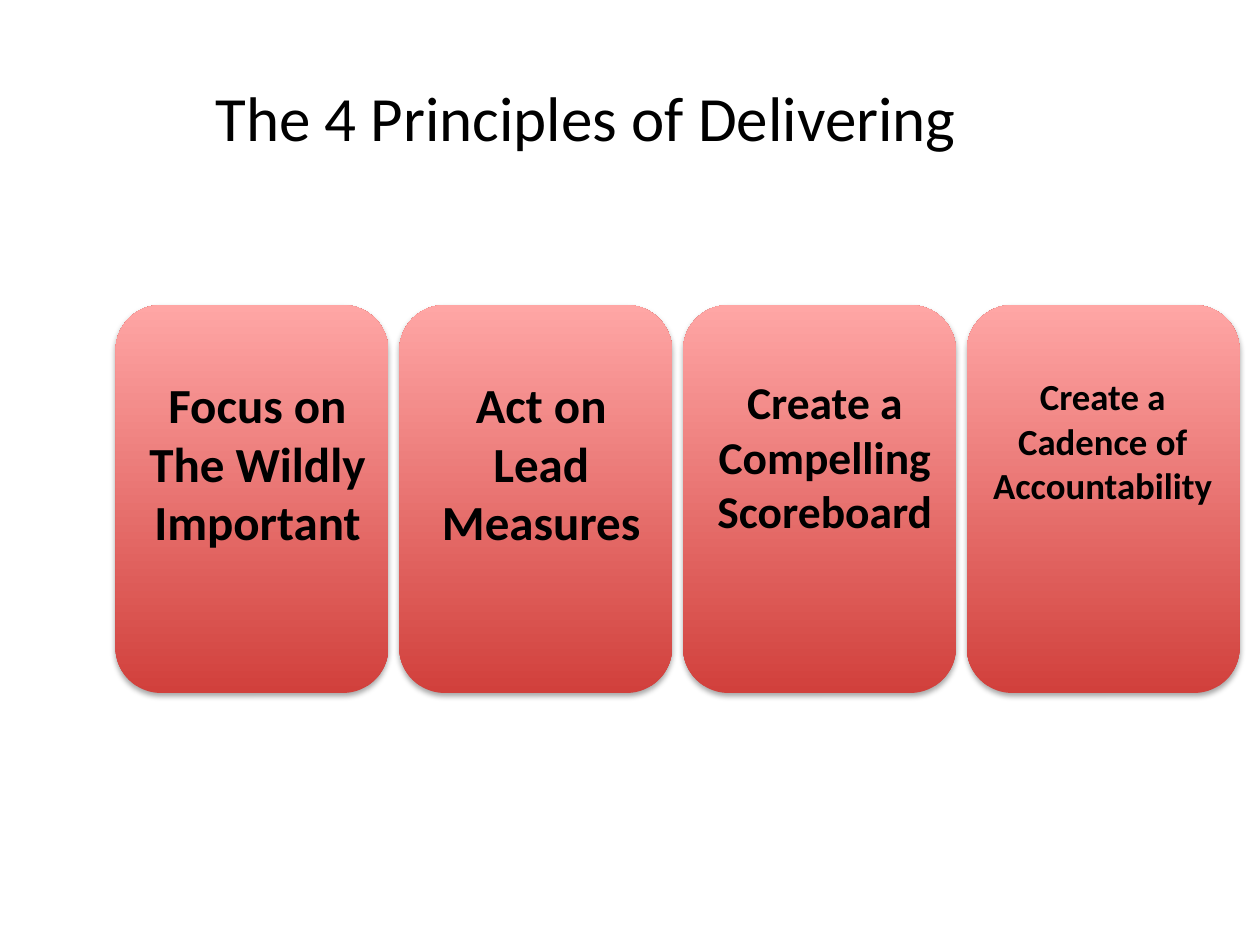
import pptx
import pptx.dml.color
import pptx.enum.shapes
import pptx.enum.text
import pptx.oxml
import pptx.oxml.ns
import pptx.util

Cm = pptx.util.Cm

FONT = "Calibri"
COLORS = {"text": "000000", "card_bottom": "D1403C", "card_top": "FFA6A5", "shadow": "000000"}
CARD_LEFT, CARD_TOP, CARD_PITCH = 2.33, 6.15, 5.72
CARD_WIDTH, CARD_HEIGHT = 5.5, 7.82
LABEL_TOP = 7.42
DISCIPLINES = [
    ("Focus on The Wildly Important", 28, 0.42, 4.88, 5.05),
    ("Act on Lead Measures", 28, 0.42, 4.88, 3.84),
    ("Create a Compelling Scoreboard", 26, 0.42, 4.88, 3.58),
    ("Create a Cadence of Accountability", 21, 0.2, 5.08, 4.7),
]


def color(name):
    return pptx.dml.color.RGBColor.from_string(COLORS[name])


def set_text(text_frame, text, size, alignment, bold=False):
    text_frame.text = text
    text_frame.word_wrap = True
    paragraph = text_frame.paragraphs[0]
    paragraph.alignment = alignment
    font = paragraph.runs[0].font
    font.name = FONT
    font.size = pptx.util.Pt(size)
    font.bold = bold
    font.color.rgb = color("text")


def add_title(slide, text):
    title = slide.shapes.title
    title.left, title.top, title.width, title.height = Cm(4.09), Cm(0.76), Cm(21.31), Cm(3.18)
    set_text(title.text_frame, text, 36, pptx.enum.text.PP_ALIGN.LEFT)
    title.text_frame.vertical_anchor = pptx.enum.text.MSO_ANCHOR.MIDDLE


def add_shadow(shape):
    shape.shadow.inherit = False
    effects = shape._element.spPr.find(pptx.oxml.ns.qn("a:effectLst"))
    effects.append(pptx.oxml.parse_xml(
        f'<a:outerShdw {pptx.oxml.ns.nsdecls("a")} blurRad="40000" dist="23000" '
        f'dir="5400000" rotWithShape="0"><a:srgbClr val="{COLORS["shadow"]}">'
        '<a:alpha val="35000"/></a:srgbClr></a:outerShdw>'
    ))


def add_card(slide, left):
    card = slide.shapes.add_shape(
        pptx.enum.shapes.MSO_SHAPE.ROUNDED_RECTANGLE,
        Cm(left), Cm(CARD_TOP), Cm(CARD_WIDTH), Cm(CARD_HEIGHT),
    )
    card.fill.gradient()
    card.fill.gradient_angle = 90
    for stop, name in zip(card.fill.gradient_stops, ("card_bottom", "card_top")):
        stop.color.rgb = color(name)
    card.line.fill.background()
    add_shadow(card)


def add_label(slide, left, width, height, text, size):
    label = slide.shapes.add_textbox(Cm(left), Cm(LABEL_TOP), Cm(width), Cm(height))
    set_text(label.text_frame, text, size, pptx.enum.text.PP_ALIGN.CENTER, bold=True)


def main():
    presentation = pptx.Presentation()
    presentation.slide_width, presentation.slide_height = Cm(25.4), Cm(19.05)
    slide = presentation.slides.add_slide(presentation.slide_layouts[5])
    add_title(slide, "The 4 Principles of Delivering")
    card_lefts = [CARD_LEFT + index * CARD_PITCH for index in range(len(DISCIPLINES))]
    for left in card_lefts:
        add_card(slide, left)
    for left, (text, size, inset, width, height) in zip(card_lefts, DISCIPLINES):
        add_label(slide, left + inset, width, height, text, size)
    presentation.save("out.pptx")


if __name__ == "__main__":
    main()
